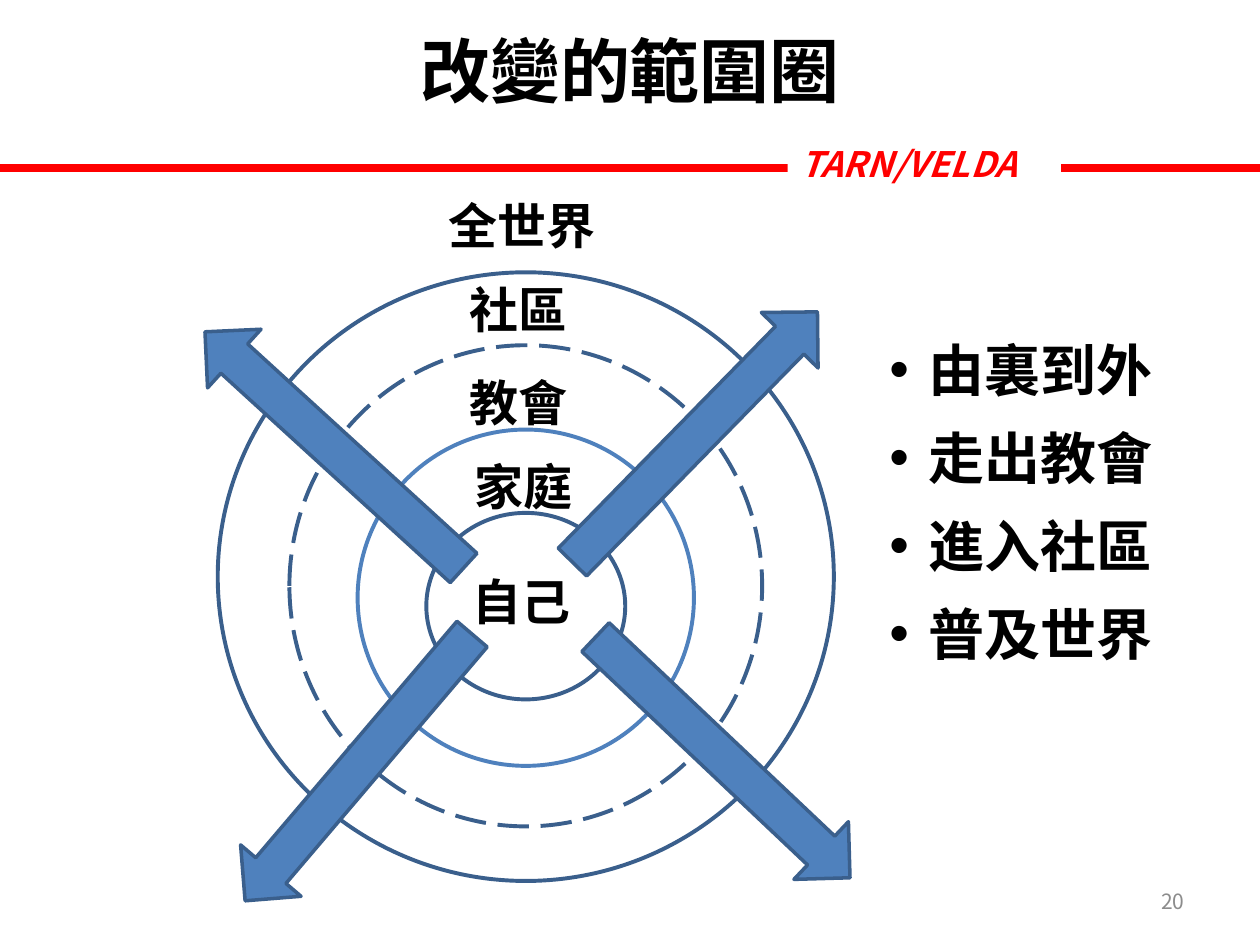
from dataclasses import dataclass

from lxml.etree import SubElement
from pptx import Presentation
from pptx.dml.color import RGBColor
from pptx.enum.dml import MSO_LINE
from pptx.enum.shapes import MSO_CONNECTOR, MSO_SHAPE
from pptx.enum.text import MSO_ANCHOR, MSO_AUTO_SIZE, PP_ALIGN
from pptx.oxml.ns import qn
from pptx.util import Cm, Pt


@dataclass(frozen=True)
class Theme:
    font: str = "Noto Sans CJK TC"
    ink: str = "000000"
    accent: str = "FF0000"
    paper: str = "FFFFFF"
    blue: str = "4F81BD"
    edge: str = "3A5F8C"
    muted: str = "8C8C8C"
    title_size: int = 40
    bullet_size: int = 32
    label_size: int = 28
    banner_size: int = 20
    page_size: int = 12


@dataclass(frozen=True)
class Ring:
    top: float
    width: float
    height: float
    color: str
    dashed: bool = False


@dataclass(frozen=True)
class Label:
    text: str
    center: float
    top: float
    width: float = 2.51


@dataclass(frozen=True)
class Arrow:
    center_x: float
    center_y: float
    angle: float


THEME = Theme()
SLIDE_WIDTH, SLIDE_HEIGHT = 25.4, 19.05
RING_CENTER = 10.6
LABEL_HEIGHT = 1.45
ARROW_WIDTH, ARROW_LENGTH = 1.6, 7.06
BULLET_INDENT = 0.79

RINGS = [
    Ring(10.34, 4.01, 3.76, THEME.edge),
    Ring(8.66, 6.78, 6.78, THEME.blue),
    Ring(6.96, 9.53, 9.7, THEME.edge, dashed=True),
    Ring(5.49, 12.42, 12.27, THEME.edge),
]
LABELS = [
    Label("自己", 10.52, 11.4, 2.54),
    Label("家庭", 10.55, 9.07),
    Label("教會", 10.45, 7.39),
    Label("社區", 10.45, 5.51),
    Label("全世界", 10.52, 3.81, 3.51),
]
ARROWS = [
    Arrow(14.01, 8.81, 44.4),
    Arrow(6.74, 9.07, 312.4),
    Arrow(14.57, 15.27, 133.4),
    Arrow(7.23, 15.47, 220.4),
]
BULLETS = ["由裏到外", "走出教會", "進入社區", "普及世界"]


def rgb(color: str) -> RGBColor:
    return RGBColor.from_string(color)


def add_text(shapes, lines: list[str], left: float, top: float, width: float, height: float, *,
             size: int, color: str = THEME.ink, bold: bool = True, italic: bool = False,
             align=PP_ALIGN.LEFT, anchor=MSO_ANCHOR.TOP, wrap: bool = True, grow: bool = True,
             fill: str | None = None, bulleted: bool = False) -> None:
    box = shapes.add_textbox(Cm(left), Cm(top), Cm(width), Cm(height))
    if fill:
        box.fill.solid()
        box.fill.fore_color.rgb = rgb(fill)
    frame = box.text_frame
    frame.word_wrap = wrap
    frame.vertical_anchor = anchor
    frame.auto_size = MSO_AUTO_SIZE.SHAPE_TO_FIT_TEXT if grow else MSO_AUTO_SIZE.NONE
    for index, line in enumerate(lines):
        paragraph = frame.add_paragraph() if index else frame.paragraphs[0]
        paragraph.alignment = align
        if bulleted:
            add_bullet(paragraph)
        run = paragraph.add_run()
        run.text = line
        font = run.font
        font.name, font.size, font.bold, font.italic = THEME.font, Pt(size), bold, italic
        font.color.rgb = rgb(color)
        east_asian = SubElement(run._r.get_or_add_rPr(), qn("a:ea"))
        east_asian.set("typeface", THEME.font)


def add_bullet(paragraph) -> None:
    paragraph.space_before = Pt(12)
    properties = paragraph._p.get_or_add_pPr()
    properties.set("marL", str(Cm(BULLET_INDENT)))
    properties.set("indent", str(-Cm(BULLET_INDENT)))
    SubElement(properties, qn("a:buFont")).set("typeface", "Arial")
    SubElement(properties, qn("a:buChar")).set("char", "•")


def add_banner(shapes) -> None:
    """Draw the red rule with the group's name set into it."""
    rule = shapes.add_connector(MSO_CONNECTOR.STRAIGHT, Cm(0), Cm(3.38), Cm(SLIDE_WIDTH), Cm(3.38))
    rule.line.color.rgb = rgb(THEME.accent)
    rule.line.width = Pt(4.5)
    SubElement(rule._element.spPr, qn("a:effectLst"))
    add_text(shapes, ["TARN/VELDA"], 15.88, 2.74, 5.51, 1.12, size=THEME.banner_size,
             color=THEME.accent, italic=True, fill=THEME.paper)


def add_ring(shapes, ring: Ring) -> None:
    circle = shapes.add_shape(MSO_SHAPE.OVAL, Cm(RING_CENTER - ring.width / 2), Cm(ring.top),
                              Cm(ring.width), Cm(ring.height))
    circle.shadow.inherit = False
    circle.fill.background()
    circle.line.color.rgb = rgb(ring.color)
    circle.line.width = Pt(2.25)
    if ring.dashed:
        circle.line.dash_style = MSO_LINE.LONG_DASH


def add_arrow(shapes, arrow: Arrow) -> None:
    pointer = shapes.add_shape(MSO_SHAPE.UP_ARROW, Cm(arrow.center_x - ARROW_WIDTH / 2),
                               Cm(arrow.center_y - ARROW_LENGTH / 2),
                               Cm(ARROW_WIDTH), Cm(ARROW_LENGTH))
    pointer.rotation = arrow.angle
    pointer.shadow.inherit = False
    pointer.fill.solid()
    pointer.fill.fore_color.rgb = rgb(THEME.blue)
    pointer.line.color.rgb = rgb(THEME.edge)
    pointer.line.width = Pt(2)


def main() -> None:
    deck = Presentation()
    deck.slide_width, deck.slide_height = Cm(SLIDE_WIDTH), Cm(SLIDE_HEIGHT)
    shapes = deck.slides.add_slide(deck.slide_layouts[6]).shapes

    add_banner(shapes)
    add_text(shapes, ["改變的範圍圈"], 0, 0.43, SLIDE_WIDTH, 1.96,
             size=THEME.title_size, align=PP_ALIGN.CENTER)

    circles = shapes.add_group_shape().shapes
    for ring in RINGS:
        add_ring(circles, ring)
    for label in LABELS:
        add_text(circles, [label.text], label.center - label.width / 2, label.top, label.width,
                 LABEL_HEIGHT, size=THEME.label_size, align=PP_ALIGN.CENTER, wrap=False)

    add_text(shapes, BULLETS, 17.68, 6.63, 5.92, 7.77, size=THEME.bullet_size, bulleted=True)
    for arrow in ARROWS:
        add_arrow(shapes, arrow)
    add_text(shapes, ["20"], 18.21, 17.65, 5.92, 1.02, size=THEME.page_size, color=THEME.muted,
             bold=False, align=PP_ALIGN.RIGHT, anchor=MSO_ANCHOR.MIDDLE, grow=False)

    deck.save("out.pptx")


if __name__ == "__main__":
    main()
